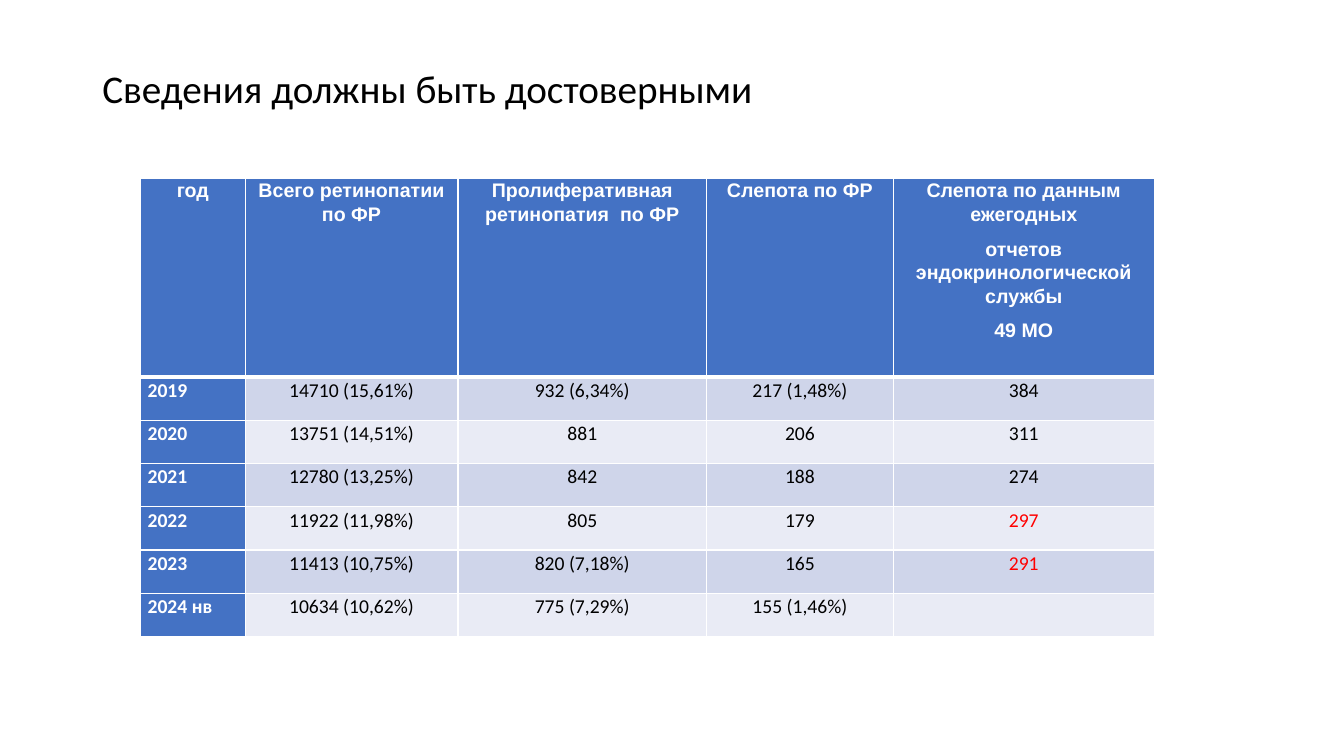
from lxml import etree
from pptx import Presentation
from pptx import util as u
from pptx.dml.color import RGBColor
from pptx.enum import text
from pptx.oxml import ns

COLORS = {
    "white": "FFFFFF",
    "black": "000000",
    "red": "FF0000",
    "header": "4472C4",
    "band_dark": "CFD5EA",
    "band_light": "E9EBF5",
}
TITLE = "Сведения должны быть достоверными"
HEADINGS = [
    "год",
    "Всего ретинопатии по ФР",
    "Пролиферативная ретинопатия  по ФР",
    "Слепота по ФР",
    "Слепота по данным ежегодных\nотчетов эндокринологической службы\n49 МО",
]
YEARS = [
    ["2019", "14710 (15,61%)", "932 (6,34%)", "217 (1,48%)", "384"],
    ["2020", "13751 (14,51%)", "881", "206", "311"],
    ["2021", "12780 (13,25%)", "842", "188", "274"],
    ["2022", "11922 (11,98%)", "805", "179", "297"],
    ["2023", "11413 (10,75%)", "820 (7,18%)", "165", "291"],
    ["2024 нв", "10634 (10,62%)", "775 (7,29%)", "155 (1,46%)", ""],
]
DOUBTFUL = {"297", "291"}
COLUMN_WIDTHS = [2.64, 5.36, 6.27, 4.7, 6.58]
HEADER_HEIGHT, YEAR_HEIGHT = 5, 1.09


def rgb(name):
    return RGBColor.from_string(COLORS[name])


def format_text(frame, size, font, color, bold=False, align=text.PP_ALIGN.LEFT,
                spacing=1.07, after=8):
    for paragraph in frame.paragraphs:
        paragraph.alignment = align
        paragraph.line_spacing = spacing
        paragraph.space_after = u.Pt(after)
        for run in paragraph.runs:
            run.font.size = u.Pt(size)
            run.font.name = font
            run.font.bold = bold
            run.font.color.rgb = rgb(color)


def add_title(slide):
    title = slide.shapes.add_textbox(u.Cm(2.33), u.Cm(1.01), u.Cm(29.21), u.Cm(2.57))
    frame = title.text_frame
    frame.word_wrap = True
    frame.vertical_anchor = text.MSO_ANCHOR.MIDDLE
    frame.text = TITLE
    format_text(frame, 28, "Calibri", "black", spacing=0.9, after=0)


def set_borders(cell, bottom):
    properties = cell._tc.get_or_add_tcPr()
    for side, width in (("L", 1), ("R", 1), ("T", 1), ("B", bottom)):
        line = etree.SubElement(properties, ns.qn(f"a:ln{side}"), w=str(u.Pt(width)))
        fill = etree.SubElement(line, ns.qn("a:solidFill"))
        etree.SubElement(fill, ns.qn("a:srgbClr"), val=COLORS["white"])


def fill_cell(cell, wording, fill, font, color, bold, align, bottom=1):
    set_borders(cell, bottom)
    cell.fill.solid()
    cell.fill.fore_color.rgb = rgb(fill)
    cell.margin_left = cell.margin_right = u.Cm(0.18)
    cell.margin_top = cell.margin_bottom = 0
    cell.text_frame.text = wording
    format_text(cell.text_frame, 14, font, color, bold, align)


def add_retinopathy_table(slide):
    height = HEADER_HEIGHT + YEAR_HEIGHT * len(YEARS)
    table = slide.shapes.add_table(
        len(YEARS) + 1, len(HEADINGS), u.Cm(3.54), u.Cm(4.5),
        u.Cm(sum(COLUMN_WIDTHS)), u.Cm(height)).table
    table.first_col = True
    for column, width in zip(table.columns, COLUMN_WIDTHS):
        column.width = u.Cm(width)
    for index, row in enumerate(table.rows):
        row.height = u.Cm(YEAR_HEIGHT if index else HEADER_HEIGHT)

    # Headings
    center = text.PP_ALIGN.CENTER
    for column, heading in enumerate(HEADINGS):
        fill_cell(table.cell(0, column), heading, "header", "Arial", "white",
                  True, center, bottom=3)

    # Years with banded figures
    for row, (year, *figures) in enumerate(YEARS, start=1):
        fill_cell(table.cell(row, 0), year, "header", "Calibri", "white",
                  True, text.PP_ALIGN.LEFT)
        band = "band_dark" if row % 2 else "band_light"
        for column, figure in enumerate(figures, start=1):
            color = "red" if figure in DOUBTFUL else "black"
            fill_cell(table.cell(row, column), figure, band, "Calibri", color,
                      False, center)


def main():
    deck = Presentation()
    deck.slide_width, deck.slide_height = u.Cm(33.87), u.Cm(19.05)
    slide = deck.slides.add_slide(deck.slide_layouts[6])
    add_title(slide)
    add_retinopathy_table(slide)
    deck.save("out.pptx")


if __name__ == "__main__":
    main()
